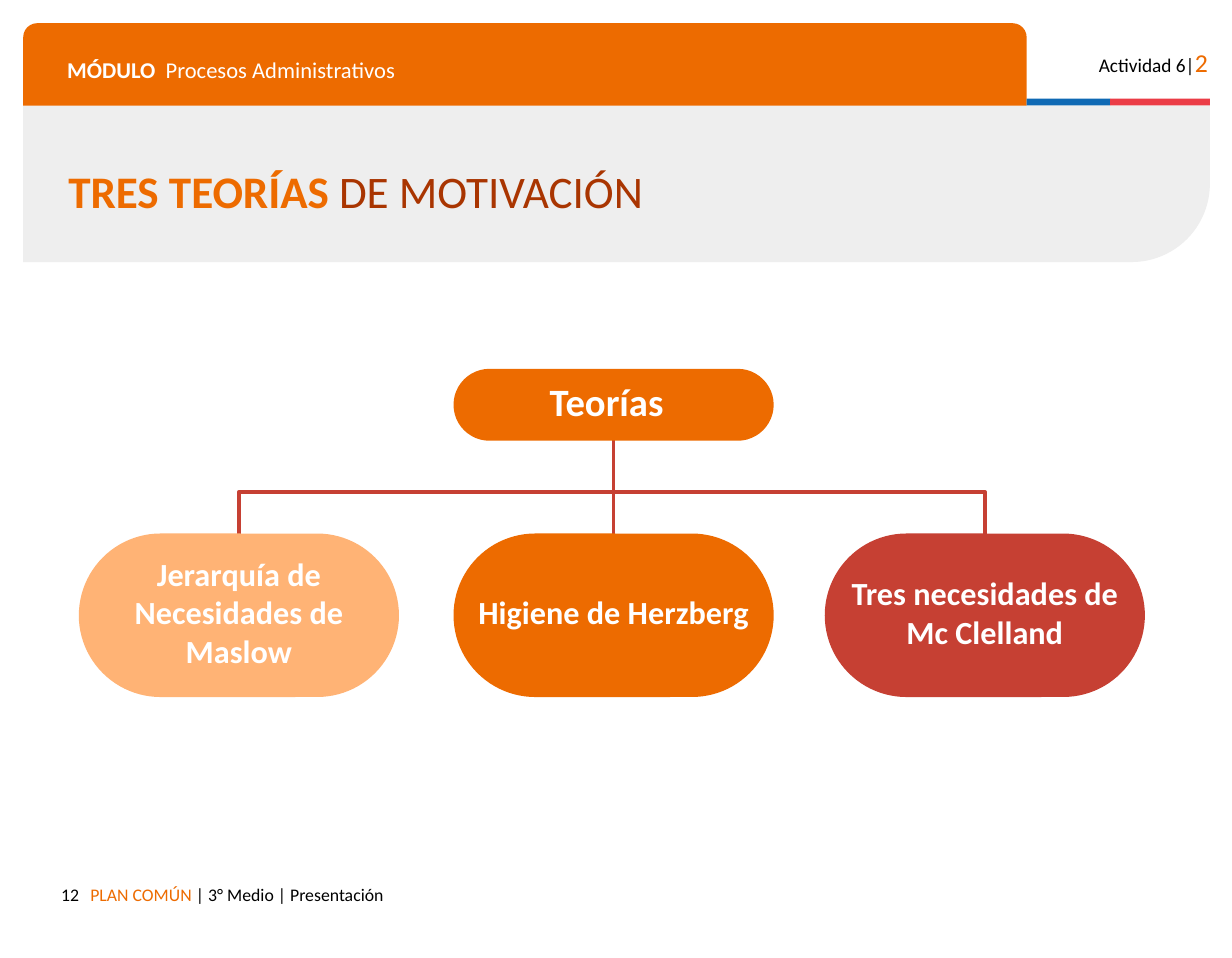
from dataclasses import dataclass
from typing import Any

from lxml import etree
from pptx import Presentation
from pptx import util as u
from pptx.dml.color import RGBColor
from pptx.enum import shapes, text
from pptx.oxml import ns

PX = 9144  # EMU per px, 100 px to the inch
HUES = {
    "orange": "ED6B00", "peach": "FFB375", "brick": "C64033", "rust": "A93501",
    "blue": "0F69B4", "red": "EB3C46", "gray": "EEEEEE",
    "black": "000000", "white": "FFFFFF",
}
KIND = shapes.MSO_SHAPE
LEFT, MID, RIGHT = text.PP_ALIGN.LEFT, text.PP_ALIGN.CENTER, text.PP_ALIGN.RIGHT


@dataclass(frozen=True)
class Box:
    x: int
    y: int
    w: int
    h: int

    @property
    def mid(self) -> int:
        return self.x + self.w // 2


@dataclass(frozen=True)
class Run:
    words: str
    size: int
    hue: str
    bold: bool = False


@dataclass(frozen=True)
class Form:
    kind: Any
    box: Box
    hue: str
    round: float | None = None
    flip: bool = False


@dataclass(frozen=True)
class Note:
    box: Box
    runs: tuple[Run, ...]
    align: Any = LEFT
    tab: int = 0
    pitch: float = 1.0
    anchor: Any = text.MSO_ANCHOR.TOP


@dataclass(frozen=True)
class Pill:
    box: Box
    label: Run
    hue: str
    shift: int = 0


def emu(box: Box) -> list[int]:
    return [n * PX for n in (box.x, box.y, box.w, box.h)]


def tint(hue: str) -> RGBColor:
    return RGBColor.from_string(HUES[hue])


def apply(item: Any, form: dict[str, Any]) -> None:
    for key, val in form.items():
        setattr(item, key, val)


def write(para: Any, runs: tuple[Run, ...]) -> None:
    for run in runs:
        part = para.add_run()
        part.text = run.words
        apply(part.font, {"name": "Calibri", "size": u.Pt(run.size), "bold": run.bold})
        part.font.color.rgb = tint(run.hue)


def draw_form(tree: Any, form: Form) -> Any:
    shape = tree.add_shape(form.kind, *emu(form.box))
    shape.shadow.inherit = False
    shape.fill.solid()
    shape.fill.fore_color.rgb = tint(form.hue)
    shape.line.fill.background()
    if form.round is not None:
        shape.adjustments[0] = form.round
    if form.flip:
        shape.element.spPr.xfrm.set("flipV", "1")
    return shape


def draw_note(tree: Any, note: Note) -> None:
    frame = tree.add_textbox(*emu(note.box)).text_frame
    inset = {f"margin_{side}": 10 * PX for side in ("left", "top", "right", "bottom")}
    apply(frame, {"word_wrap": True, "vertical_anchor": note.anchor} | inset)
    para = frame.paragraphs[0]
    apply(para, {"alignment": note.align, "line_spacing": note.pitch})
    if note.tab:
        tabs = etree.SubElement(para._p.get_or_add_pPr(), ns.qn("a:tabLst"))
        etree.SubElement(tabs, ns.qn("a:tab"), pos=str(note.tab * PX), algn="l")
    write(para, note.runs)


def draw_pill(tree: Any, pill: Pill) -> None:
    """Draw a pill whose label sits slightly above centre, moved left by shift."""
    shape = draw_form(tree, Form(KIND.ROUNDED_RECTANGLE, pill.box, pill.hue, 0.5))
    frame = shape.text_frame
    apply(frame, {
        "word_wrap": True, "vertical_anchor": text.MSO_ANCHOR.MIDDLE,
        "margin_left": 0, "margin_right": 2 * pill.shift * PX,
        "margin_top": 0, "margin_bottom": 6 * PX,
    })
    frame.paragraphs[0].alignment = MID
    write(frame.paragraphs[0], (pill.label,))


def draw_links(tree: Any, root: Box, kids: list[Box]) -> None:
    """Join the root pill to its kids with a bracket and a central stem."""
    rail, foot = 424, kids[0].y + 15
    left, right = kids[0].mid, kids[-1].mid
    pen = tree.build_freeform(left, foot, scale=PX)
    pen.add_line_segments([(left, rail), (right, rail), (right, foot)], close=False)
    arms = pen.convert_to_shape()
    arms.shadow.inherit = False
    arms.fill.background()
    ends = [n * PX for n in (root.mid, root.y + 36, root.mid, foot)]
    stem = tree.add_connector(shapes.MSO_CONNECTOR.STRAIGHT, *ends)
    etree.SubElement(stem.element.spPr, ns.qn("a:effectLst"))
    for link in (arms, stem):
        link.line.color.rgb = tint("brick")
        link.line.width = u.Pt(2.25)


FORMS = [
    Form(KIND.ROUND_1_RECTANGLE, Box(20, 91, 1023, 135), "gray", 0.5, True),
    Form(KIND.ROUND_2_SAME_RECTANGLE, Box(20, 20, 865, 71), "orange", 0.17),
    Form(KIND.RECTANGLE, Box(885, 85, 72, 6), "blue"),
    Form(KIND.RECTANGLE, Box(957, 85, 86, 6), "red"),
]
NOTES = [
    Note(Box(923, 30, 128, 43),
         (Run("Actividad 6|", 12, "black"), Run("2", 16, "orange")), RIGHT),
    Note(Box(48, 38, 814, 41),
         (Run("MÓDULO", 14, "white", True),
          Run("\tProcesos Administrativos", 14, "white")), tab=85),
    Note(Box(68, 753, 715, 35),
         (Run("PLAN COMÚN ", 11, "orange"),
          Run("| 3° Medio | Presentación", 11, "black"))),
    Note(Box(41, 753, 37, 35), (Run("12", 11, "black"),), RIGHT),
    Note(Box(49, 139, 662, 59),
         (Run("TRES TEORÍAS ", 28, "orange", True),
          Run("DE MOTIVACIÓN", 28, "rust")),
         pitch=0.8, anchor=text.MSO_ANCHOR.MIDDLE),
]
ROOT = Pill(Box(391, 318, 276, 62), Run("Teorías", 24, "white", True), "orange", 6)
KIDS = [
    Pill(Box(x, 460, 276, 141), Run(words, 20, "white", True), hue)
    for x, words, hue in (
        (68, "Jerarquía de Necesidades de Maslow", "peach"),
        (391, "Higiene de Herzberg", "orange"),
        (711, "Tres necesidades de Mc Clelland", "brick"),
    )
]


def main() -> None:
    deck = Presentation()
    apply(deck, {"slide_width": 1062 * PX, "slide_height": 826 * PX})
    tree = deck.slides.add_slide(deck.slide_layouts[6]).shapes
    for form in FORMS:
        draw_form(tree, form)
    for note in NOTES:
        draw_note(tree, note)
    draw_links(tree, ROOT.box, [kid.box for kid in KIDS])
    for pill in (ROOT, *KIDS):
        draw_pill(tree, pill)
    deck.save("out.pptx")


if __name__ == "__main__":
    main()
